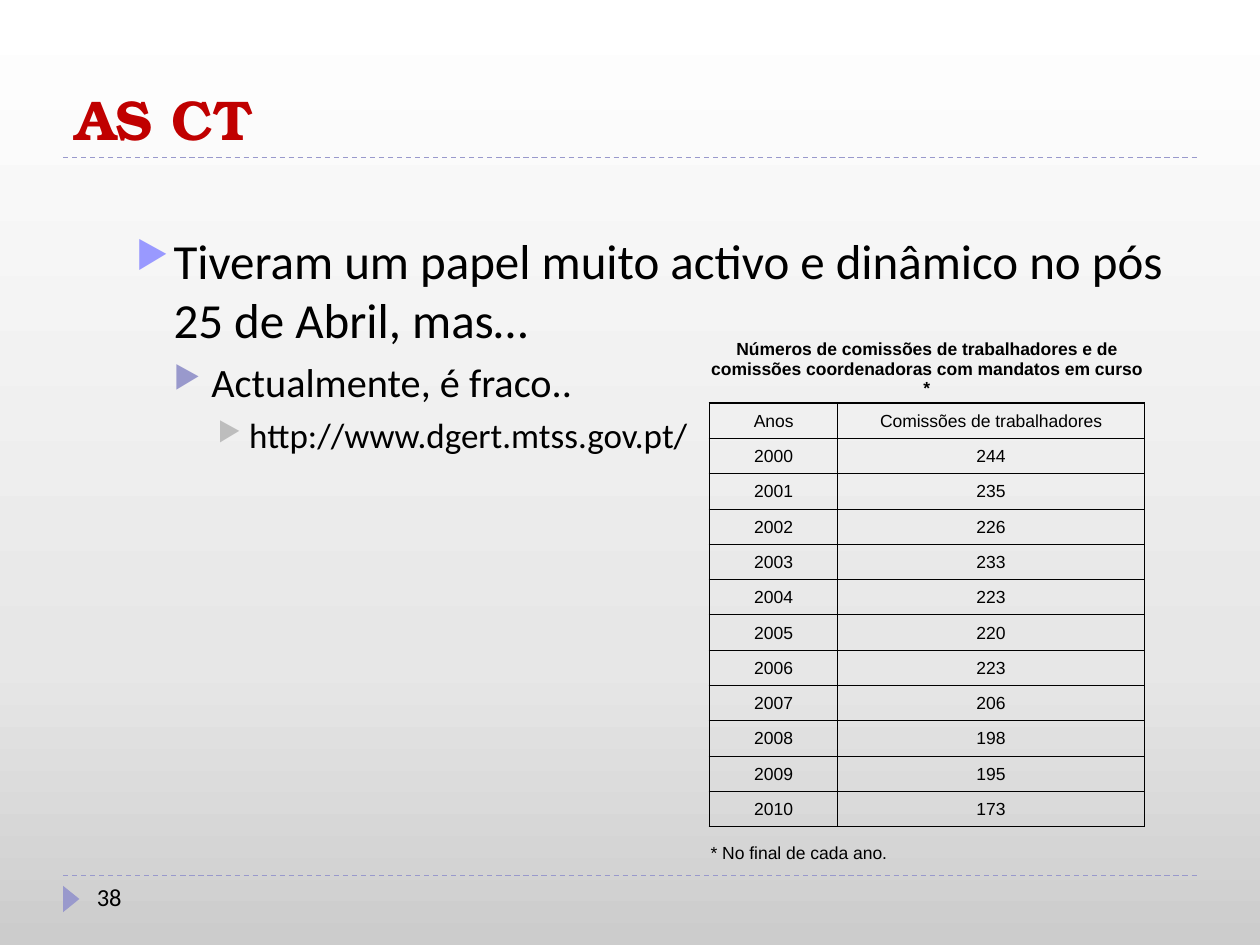
from copy import deepcopy

from lxml.etree import SubElement
from pptx import Presentation
from pptx.dml.color import RGBColor as Rgb
from pptx.enum.dml import MSO_LINE as Dash
from pptx.enum.shapes import MSO_CONNECTOR as Link, MSO_SHAPE as Kind
from pptx.enum.text import MSO_ANCHOR as Anchor, PP_ALIGN as Align
from pptx.oxml.ns import qn
from pptx.util import Inches, Pt

HUES = {"ink": "000000", "title": "C00000", "accent": "9999CC",
        "violet": "9999FF", "grey": "BDBDBD"}
SHADES = [(0, "CCCCCC"), (0.3, "E7E7E7"), (1, "FFFFFF")]
POINTS = [
    ("Tiveram um papel muito activo e dinâmico no pós 25 de Abril, mas…",
     28, 6, 0.3, 0.3, "violet"),
    ("Actualmente, é fraco..", 23, 5, 0.6, 0.3, "accent"),
    ("http://www.dgert.mtss.gov.pt/", 20, 5, 0.9, 0.25, "grey"),
]
CAPTION = ("Números de comissões de trabalhadores e de comissões "
           "coordenadoras com mandatos em curso *")
COUNTS = [244, 235, 226, 233, 223, 220, 223, 206, 198, 195, 173]
NO_STYLE = "{2D5ABB26-0587-4C30-8999-92F81FD0307C}"


def hue(name):
    """Return the named colour."""
    return Rgb.from_string(HUES[name])


def put(para, text, size=10, font="Arial", color="ink", bold=False, align=Align.LEFT):
    """Write one formatted run into a paragraph."""
    para.alignment = align
    run = para.add_run()
    run.text = text
    run.font.size, run.font.name, run.font.bold = Pt(size), font, bold
    run.font.color.rgb = hue(color)


def box(slide, x, y, w, h, anchor=Anchor.TOP):
    """Add a wrapping text box and return its frame."""
    frame = slide.shapes.add_textbox(Inches(x), Inches(y), Inches(w), Inches(h)).text_frame
    frame.word_wrap, frame.vertical_anchor = True, anchor
    return frame


def shade(slide):
    """Fill the background with a vertical gradient."""
    fill = slide.background.fill
    fill.gradient()
    fill.gradient_angle = 90
    stops = slide.element.xpath(".//a:gsLst")[0]
    stops.append(deepcopy(stops[0]))
    for stop, (place, color) in zip(fill.gradient_stops, SHADES):
        stop.position, stop.color.rgb = place, Rgb.from_string(color)


def rule(slide, y):
    """Draw a dashed line across the slide."""
    line = slide.shapes.add_connector(Link.STRAIGHT, Inches(0.5), Inches(y), Inches(9.5), Inches(y))
    line.line.color.rgb, line.line.width = hue("accent"), Pt(0.75)
    line.line.dash_style = Dash.DASH
    SubElement(line.element.spPr, qn("a:effectLst"))


def marker(slide):
    """Draw the triangle beside the page number."""
    mark = slide.shapes.add_shape(
        Kind.ISOSCELES_TRIANGLE, Inches(0.46), Inches(7.07), Inches(0.21), Inches(0.13))
    mark.rotation = 90
    mark.shadow.inherit = False
    mark.fill.solid()
    mark.fill.fore_color.rgb = hue("accent")
    mark.line.fill.background()


def bullet(para, left, hang, color):
    """Give a paragraph a hanging triangle bullet."""
    props = para._p.get_or_add_pPr()
    props.set("marL", str(Inches(left)))
    props.set("indent", str(-Inches(hang)))
    SubElement(SubElement(props, qn("a:buClr")), qn("a:srgbClr"), val=HUES[color])
    SubElement(props, qn("a:buSzPct"), val="76000")
    SubElement(props, qn("a:buChar"), char="▶")


def points(slide):
    """Write the bulleted outline."""
    frame = box(slide, 0.98, 1.78, 8.5, 5)
    for i, (text, size, gap, left, hang, color) in enumerate(POINTS):
        para = frame.add_paragraph() if i else frame.paragraphs[0]
        put(para, text, size=size, font="Calibri")
        para.space_before = Pt(gap)
        bullet(para, left, hang, color)


def edge(cell, **widths):
    """Set the L, R, T and B borders of a cell in points."""
    props = cell._tc.get_or_add_tcPr()
    for side in "LRTB":
        width = widths.get(side, 0)
        line = SubElement(props, qn(f"a:ln{side}"), w=str(Pt(width)))
        if width:
            SubElement(SubElement(line, qn("a:solidFill")), qn("a:srgbClr"), val=HUES["ink"])
        else:
            SubElement(line, qn("a:noFill"))


def fill_cell(cell, text, edges, **style):
    """Set the borders, margins and text of a cell."""
    edge(cell, **edges)
    cell.fill.background()
    cell.vertical_anchor = Anchor.MIDDLE
    cell.margin_left = cell.margin_right = cell.margin_top = Inches(0.01)
    cell.margin_bottom = 0
    put(cell.text_frame.paragraphs[0], text, **style)


def table(slide):
    """Build the table of commissions by year."""
    rows = [("Anos", "Comissões de trabalhadores")]
    rows += [(str(year), str(count)) for year, count in enumerate(COUNTS, 2000)]
    last = len(rows) + 1
    grid = slide.shapes.add_table(
        last + 1, 2, Inches(5.63), Inches(2.65), Inches(3.45), Inches(4.32)).table
    grid.first_row = grid.horz_banding = False
    grid._tbl.xpath(".//a:tableStyleId")[0].text = NO_STYLE
    for col, width in zip(grid.columns, (1.02, 2.43)):
        col.width = Inches(width)
    for row, height in zip(grid.rows, [0.55] + [0.28] * len(rows) + [0.42]):
        row.height = Inches(height)
    for r in (0, last):
        grid.cell(r, 0).merge(grid.cell(r, 1))
    fill_cell(grid.cell(0, 0), CAPTION, {"B": 1}, bold=True, align=Align.CENTER)
    fill_cell(grid.cell(last, 0), "* No final de cada ano.", {"T": 1})
    for r, row in enumerate(rows, 1):
        for c, text in enumerate(row):
            edges = {"L": 0.5 if c else 1, "R": 0.5,
                     "T": 1 if r == 1 else 0.5, "B": 1 if r == last - 1 else 0.5}
            fill_cell(grid.cell(r, c), text, edges, align=Align.CENTER)


def main():
    """Build and save the slide."""
    deck = Presentation()
    deck.slide_width, deck.slide_height = Inches(10), Inches(7.5)
    slide = deck.slides.add_slide(deck.slide_layouts[6])
    shade(slide)
    for y in (6.95, 1.25):
        rule(slide, y)
    marker(slide)
    title = box(slide, 0.5, 0.17, 9, 1.08, anchor=Anchor.BOTTOM)
    put(title.paragraphs[0], "AS CT", size=32, font="TeX Gyre Bonum", color="title", bold=True)
    page = box(slide, 0.67, 6.95, 2.17, 0.4)
    put(page.paragraphs[0], "38", size=14, font="Calibri")
    points(slide)
    table(slide)
    deck.save("out.pptx")


if __name__ == "__main__":
    main()
